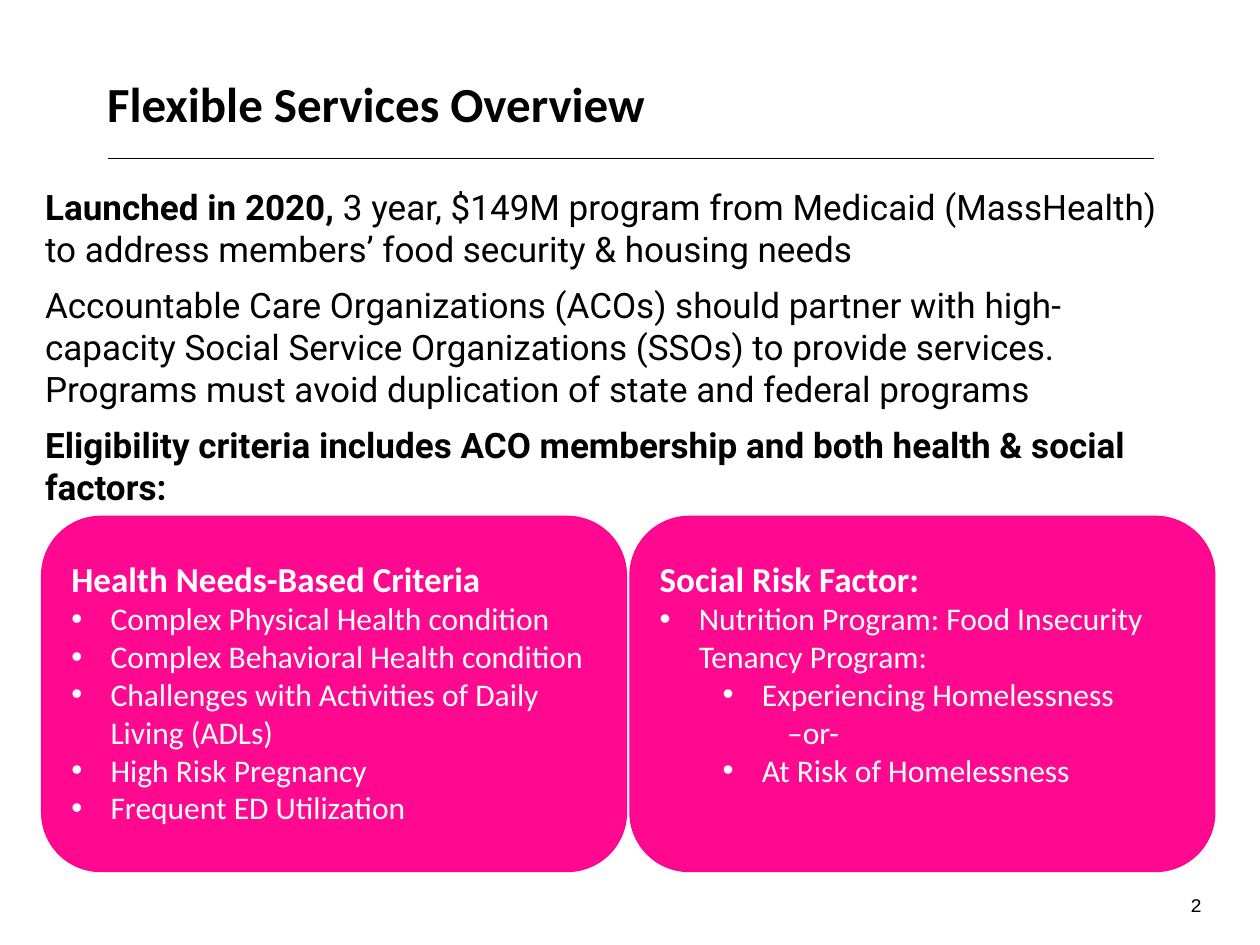
from dataclasses import dataclass

from lxml.etree import SubElement
from pptx import Presentation
from pptx.dml.color import RGBColor
from pptx.enum.shapes import MSO_CONNECTOR, MSO_SHAPE
from pptx.enum.text import MSO_ANCHOR, PP_ALIGN
from pptx.oxml.ns import qn
from pptx.util import Cm, Pt

BLACK = RGBColor(0x00, 0x00, 0x00)
WHITE = RGBColor(0xFF, 0xFF, 0xFF)
PINK = RGBColor(0xFE, 0x09, 0x90)
PINK_EDGE = RGBColor(0xFE, 0x03, 0x8D)

HEADING_FONT = "Calibri"
BODY_FONT = "Roboto"
NUMBER_FONT = "Courier New"

CARD_LEFT, CARD_TOP = 0.84, 10.41
CARD_WIDTH, CARD_HEIGHT = 11.79, 7.16
CARD_STEP = 11.86
BULLET_HANG = 0.79


@dataclass(frozen=True)
class Item:
    text: str
    indent: float = BULLET_HANG
    bullet: bool = True


@dataclass(frozen=True)
class Card:
    heading: str
    items: tuple[Item, ...]


CARDS = (
    Card("Health Needs-Based Criteria", (
        Item("Complex Physical Health condition"),
        Item("Complex Behavioral Health condition"),
        Item("Challenges with Activities of Daily Living (ADLs)"),
        Item("High Risk Pregnancy"),
        Item("Frequent ED Utilization"),
    )),
    Card("Social Risk Factor:", (
        Item("Nutrition Program: Food Insecurity Tenancy Program:"),
        Item("Experiencing Homelessness", indent=2.06),
        Item("–or-", indent=2.57, bullet=False),
        Item("At Risk of Homelessness", indent=2.06),
    )),
)

# Each paragraph is a bold lead followed by regular text
BODY = (
    ("Launched in 2020,",
     " 3 year, $149M program from Medicaid (MassHealth) to address members’ "
     "food security & housing needs"),
    ("",
     "Accountable Care Organizations (ACOs) should partner with high-capacity "
     "Social Service Organizations (SSOs) to provide services. Programs must "
     "avoid duplication of state and federal programs"),
    ("Eligibility criteria includes ACO membership and both health & social factors:",
     ""),
)


def add_run(paragraph, text: str, *, font: str, size: float,
            color: RGBColor = BLACK, bold: bool = False) -> None:
    run = paragraph.add_run()
    run.text = text
    run.font.name = font
    run.font.size = Pt(size)
    run.font.bold = bold
    run.font.color.rgb = color


def add_text_frame(slide, left: float, top: float, width: float, height: float,
                   anchor: MSO_ANCHOR = MSO_ANCHOR.TOP):
    """Add a wrapping text box without margins and return its text frame."""
    shape = slide.shapes.add_textbox(Cm(left), Cm(top), Cm(width), Cm(height))
    frame = shape.text_frame
    frame.word_wrap = True
    frame.vertical_anchor = anchor
    frame.margin_left = frame.margin_right = 0
    frame.margin_top = frame.margin_bottom = 0
    return frame


def set_indent(paragraph, item: Item) -> None:
    properties = paragraph._p.get_or_add_pPr()
    properties.set("marL", str(Cm(item.indent)))
    if item.bullet:
        properties.set("indent", str(-Cm(BULLET_HANG)))
        SubElement(properties, qn("a:buFont"), typeface="Arial")
        SubElement(properties, qn("a:buChar"), char="•")


def add_card(slide, card: Card, left: float) -> None:
    shape = slide.shapes.add_shape(
        MSO_SHAPE.ROUNDED_RECTANGLE,
        Cm(left), Cm(CARD_TOP), Cm(CARD_WIDTH), Cm(CARD_HEIGHT))
    shape.shadow.inherit = False
    shape.fill.solid()
    shape.fill.fore_color.rgb = PINK
    shape.line.color.rgb = PINK_EDGE
    shape.line.width = Pt(0.75)

    # A common top margin lines up the headings of all cards
    frame = shape.text_frame
    frame.word_wrap = True
    frame.vertical_anchor = MSO_ANCHOR.TOP
    frame.margin_top = Cm(0.48)

    heading = frame.paragraphs[0]
    heading.alignment = PP_ALIGN.LEFT
    add_run(heading, card.heading, font=HEADING_FONT, size=20, color=WHITE, bold=True)
    for item in card.items:
        paragraph = frame.add_paragraph()
        paragraph.alignment = PP_ALIGN.LEFT
        set_indent(paragraph, item)
        add_run(paragraph, item.text, font=HEADING_FONT, size=18, color=WHITE)


def add_rule(slide, left: float, right: float, top: float) -> None:
    connector = slide.shapes.add_connector(
        MSO_CONNECTOR.STRAIGHT, Cm(left), Cm(top), Cm(right), Cm(top))
    connector.line.color.rgb = BLACK
    connector.line.width = Pt(0.5)
    SubElement(connector._element.spPr, qn("a:effectLst"))


def add_body(slide) -> None:
    frame = add_text_frame(slide, 0.91, 3.73, 22.91, 13.06)
    for index, (lead, rest) in enumerate(BODY):
        paragraph = frame.add_paragraph() if index else frame.paragraphs[0]
        if index:
            paragraph.space_before = Pt(8)
        for text, bold in ((lead, True), (rest, False)):
            if text:
                add_run(paragraph, text, font=BODY_FONT, size=20, bold=bold)


def main() -> None:
    presentation = Presentation()
    presentation.slide_width = Cm(25.4)
    presentation.slide_height = Cm(19.05)
    slide = presentation.slides.add_slide(presentation.slide_layouts[6])

    # Title and rule
    title = add_text_frame(slide, 2.16, 0.48, 21.08, 2.18, MSO_ANCHOR.BOTTOM)
    add_run(title.paragraphs[0], "Flexible Services Overview",
            font=HEADING_FONT, size=28, bold=True)
    add_rule(slide, 2.18, 23.27, 3.2)

    # Program description
    add_body(slide)

    # Eligibility cards
    for index, card in enumerate(CARDS):
        add_card(slide, card, CARD_LEFT + index * CARD_STEP)

    # Page number
    number = add_text_frame(slide, 23.29, 17.98, 0.94, 0.53, MSO_ANCHOR.MIDDLE)
    number.paragraphs[0].alignment = PP_ALIGN.RIGHT
    add_run(number.paragraphs[0], "2", font=NUMBER_FONT, size=11)

    presentation.save("out.pptx")


if __name__ == "__main__":
    main()
